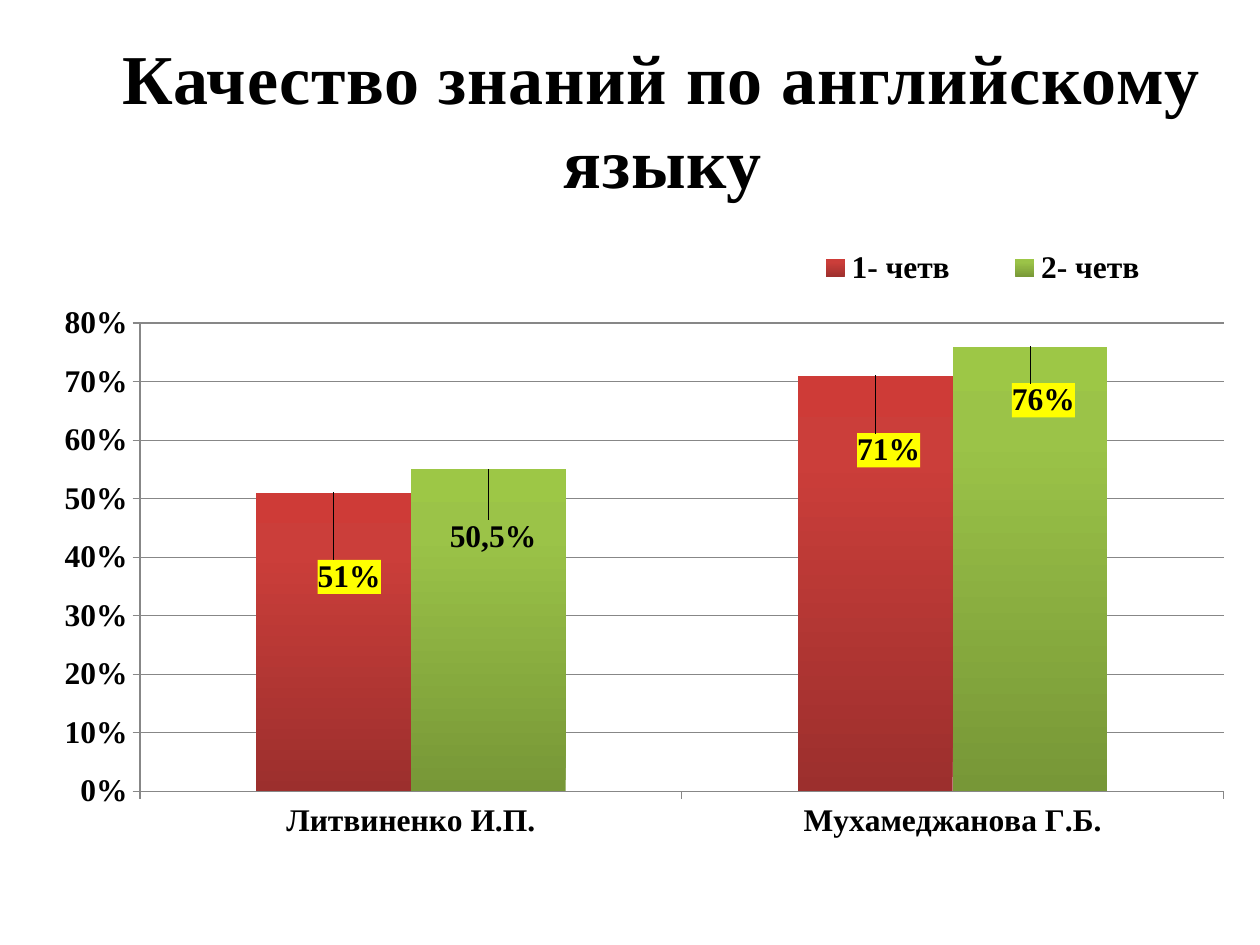
from lxml.etree import SubElement
from pptx import Presentation
from pptx.chart.data import CategoryChartData
from pptx.dml.color import RGBColor
from pptx.enum.chart import XL_CHART_TYPE as Chart
from pptx.enum.chart import XL_LABEL_POSITION as LabelPos
from pptx.enum.chart import XL_LEGEND_POSITION as LegendPos
from pptx.enum.chart import XL_TICK_MARK as Tick
from pptx.enum.text import MSO_ANCHOR as Anchor
from pptx.enum.text import MSO_AUTO_SIZE as AutoSize
from pptx.enum.text import PP_ALIGN as Align
from pptx.oxml import parse_xml
from pptx.oxml.ns import nsdecls, qn
from pptx.util import Inches, Pt

WIDTH, HEIGHT = 10, 7.5
FONT = "Times New Roman"
TEACHERS = ["Литвиненко И.П.", "Мухамеджанова Г.Б."]
QUARTERS = [
    ("1- четв", (0.51, 0.71), ((0, "9C2F2D"), (80, "CB3E3A"), (100, "CE3B37"))),
    ("2- четв", (0.55, 0.76), ((0, "779737"), (80, "9BC348"), (100, "9DC746"))),
]
LABEL_SHIFTS = [[(0.013, 0.154), (0.011, 0.14)], [(0.004, 0.13), (0.011, 0.11)]]
CUSTOM_LABELS = {(1, 0): "50,5%"}


def rgb(value):
    """Turn a hex string into a colour."""
    return RGBColor.from_string(value)


def box(x, y, w, h):
    """Turn shares of the slide's size into a position and size."""
    return [Inches(v) for v in (x * WIDTH, y * HEIGHT, w * WIDTH, h * HEIGHT)]


def style(font, size):
    """Apply the slide's bold black typeface."""
    font.name, font.size, font.bold = FONT, Pt(size), True
    font.color.rgb = rgb("000000")


def manual_layout(x, y, w=None, h=None, inner=False, edge=True):
    """Build a manual layout from shares of the chart's size."""
    layout = parse_xml(f"<c:layout {nsdecls('c')}/>")
    manual = SubElement(layout, qn("c:manualLayout"))
    items = [("layoutTarget", "inner")] if inner else []
    items += [("xMode", "edge"), ("yMode", "edge")] if edge else []
    items += [(k, v) for k, v in zip("xywh", (x, y, w, h)) if v is not None]
    for tag, value in items:
        SubElement(manual, qn(f"c:{tag}")).set("val", str(value))
    return layout


def add_title(s, text):
    """Fill and place the title placeholder."""
    sp = s.shapes.title
    sp.left, sp.top, sp.width, sp.height = box(0.052, 0.03, 0.948, 0.193)
    tf = sp.text_frame
    tf.word_wrap, tf.auto_size = True, AutoSize.SHAPE_TO_FIT_TEXT
    tf.vertical_anchor = Anchor.TOP
    p = tf.paragraphs[0]
    p.alignment = Align.CENTER
    r = p.add_run()
    r.text = text
    style(r.font, 40)
    r.font._element.set("spc", "50")
    s.shapes._spTree.append(sp._element)


def fill_gradient(series, stops):
    """Shade the columns from the bottom up."""
    marks = "".join(
        f'<a:gs pos="{pos * 1000}"><a:srgbClr val="{color}"/></a:gs>' for pos, color in stops
    )
    gradient = parse_xml(
        f"<a:gradFill {nsdecls('a')}><a:gsLst>{marks}</a:gsLst>"
        '<a:lin ang="16200000" scaled="0"/></a:gradFill>'
    )
    series._element.get_or_add_spPr().insert(0, gradient)


def add_label(series, index, shift, text=None):
    """Put a yellow value label inside a column."""
    label = series.points[index].data_label
    label.position = LabelPos.OUTSIDE_END
    node = series._element.xpath(f"c:dLbls/c:dLbl[c:idx/@val='{index}']")[0]
    node.find(qn("c:idx")).addnext(manual_layout(*shift, edge=False))
    place = node.find(qn("c:dLblPos"))
    place.addprevious(
        parse_xml(f'<c:numFmt {nsdecls("c")} formatCode="0%" sourceLinked="0"/>')
    )
    place.addprevious(
        parse_xml(
            f"<c:spPr {nsdecls('c', 'a')}><a:solidFill>"
            '<a:srgbClr val="FFFF00"/></a:solidFill></c:spPr>'
        )
    )
    if text:
        r = label.text_frame.paragraphs[0].add_run()
        r.text = text
        style(r.font, 18)
    else:
        style(label.font, 18)


def format_axes(chart):
    """Set the axes, their scale and the gridlines."""
    value = chart.value_axis
    value.minimum_scale, value.maximum_scale, value.major_unit = 0, 0.8, 0.1
    value.tick_labels.number_format = "0%"
    value.tick_labels.number_format_is_linked = False
    value.has_major_gridlines = True
    for axis in (value, chart.category_axis):
        axis.major_tick_mark = Tick.OUTSIDE
        style(axis.tick_labels.font, 18)
    for part in (value, chart.category_axis, value.major_gridlines):
        part.format.line.color.rgb = rgb("878787")
        part.format.line.width = Pt(0.75)


def add_legend(chart):
    """Lay the legend out in a row above the plot."""
    chart.has_legend = True
    legend = chart.legend
    legend.position, legend.include_in_layout = LegendPos.RIGHT, False
    style(legend.font, 18)
    for old in legend._element.findall(qn("c:layout")):
        legend._element.remove(old)
    legend._element.find(qn("c:legendPos")).addnext(manual_layout(0.62, 0.03, 0.35, 0.09))


def add_column_chart(s):
    """Add the clustered columns with their labels."""
    data = CategoryChartData(number_format="0%")
    data.categories = TEACHERS
    for name, values, _ in QUARTERS:
        data.add_series(name, values)
    frame = s.shapes.add_chart(Chart.COLUMN_CLUSTERED, *box(0.016, 0.229, 0.961, 0.729), data)
    chart = frame.chart
    chart.has_title = False
    chart.font.name, chart.font.size = "Calibri", Pt(18)
    plot = chart.plots[0]
    plot.gap_width, plot.overlap, plot.vary_by_categories = 150, 0, False
    area = chart._chartSpace.chart.plotArea
    for old in area.findall(qn("c:layout")):
        area.remove(old)
    area.insert(0, manual_layout(0.099, 0.155, 0.895, 0.68, inner=True))
    for i, (series, quarter) in enumerate(zip(plot.series, QUARTERS)):
        fill_gradient(series, quarter[2])
        for j, shift in enumerate(LABEL_SHIFTS[i]):
            add_label(series, j, shift, CUSTOM_LABELS.get((i, j)))
    format_axes(chart)
    add_legend(chart)


def main():
    """Build the slide and save it."""
    prs = Presentation()
    prs.slide_width, prs.slide_height = Inches(WIDTH), Inches(HEIGHT)
    s = prs.slides.add_slide(prs.slide_layouts[5])
    add_column_chart(s)
    add_title(s, "Качество знаний по английскому языку")
    prs.save("out.pptx")


if __name__ == "__main__":
    main()
